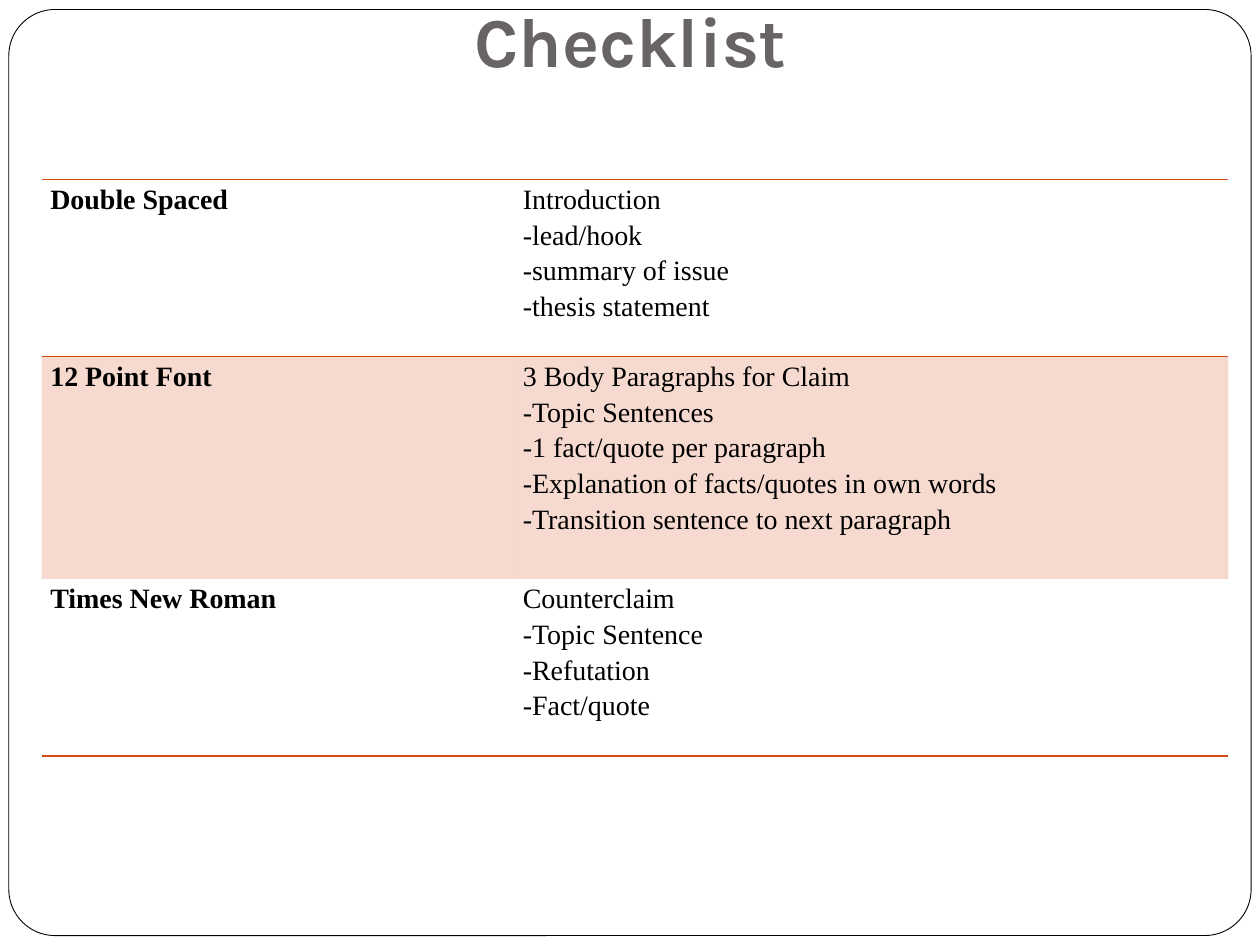
import dataclasses

import lxml.etree
import pptx
import pptx.dml.color
import pptx.enum.shapes
import pptx.enum.text
import pptx.oxml.ns
import pptx.util


@dataclasses.dataclass(frozen=True)
class Theme:
    paper: str = "FFFFFF"
    ink: str = "000000"
    title_ink: str = "696464"
    accent: str = "D34817"
    band_opacity: int = 20
    title_font: str = "Karla"
    body_font: str = "Times New Roman"
    title_size: int = 40
    body_size: int = 16
    body_spacing: float = 1.15
    frame_width: float = 0.5
    rule_width: float = 1


NO_STYLE = "{2D5ABB26-0587-4C30-8999-92F81FD0307C}"
COLUMN_SHARES = (2.35, 1.4, 4.17, 1.5)
ROW_SHARES = (1.41, 1.77, 1.41)
CHECKLIST = (
    ("Double Spaced",
     ("Introduction", "-lead/hook", "-summary of issue", "-thesis statement")),
    ("12 Point Font",
     ("3 Body Paragraphs for Claim", "-Topic Sentences",
      "-1 fact/quote per paragraph",
      "-Explanation of facts/quotes in own words",
      "-Transition sentence to next paragraph")),
    ("Times New Roman",
     ("Counterclaim", "-Topic Sentence", "-Refutation", "-Fact/quote")),
)


def color(value):
    return pptx.dml.color.RGBColor.from_string(value)


def add_node(parent, tag, **attributes):
    return lxml.etree.SubElement(parent, pptx.oxml.ns.qn(tag), attributes)


class SlideBuilder:
    def __init__(self, presentation, theme):
        self.theme = theme
        self.width = presentation.slide_width
        self.height = presentation.slide_height
        self.slide = presentation.slides.add_slide(presentation.slide_layouts[6])

    def box(self, left, top, width, height):
        """Turn shares of the slide's size into lengths."""
        return (int(left * self.width), int(top * self.height),
                int(width * self.width), int(height * self.height))

    def style(self, paragraph, font_name, size, ink, bold):
        font = paragraph.font
        font.name, font.size, font.bold = font_name, pptx.util.Pt(size), bold
        font.color.rgb = color(ink)

    def frame(self, *shares, corner):
        shape = self.slide.shapes.add_shape(
            pptx.enum.shapes.MSO_SHAPE.ROUNDED_RECTANGLE, *self.box(*shares))
        shape.adjustments[0] = corner
        shape.shadow.inherit = False
        shape.fill.solid()
        shape.fill.fore_color.rgb = color(self.theme.paper)
        shape.line.color.rgb = color(self.theme.ink)
        shape.line.width = pptx.util.Pt(self.theme.frame_width)

    def title(self, text, *shares):
        text_frame = self.slide.shapes.add_textbox(*self.box(*shares)).text_frame
        text_frame.word_wrap = True
        text_frame.vertical_anchor = pptx.enum.text.MSO_ANCHOR.BOTTOM
        text_frame.margin_bottom = pptx.util.Inches(0.1)
        paragraph = text_frame.paragraphs[0]
        paragraph.text = text
        paragraph.alignment = pptx.enum.text.PP_ALIGN.CENTER
        self.style(paragraph, self.theme.title_font, self.theme.title_size,
                   self.theme.title_ink, True)

    def rule(self, cell, side):
        line = add_node(cell._tc.get_or_add_tcPr(), f"a:{side}",
                        w=str(pptx.util.Pt(self.theme.rule_width)))
        add_node(add_node(line, "a:solidFill"), "a:srgbClr", val=self.theme.accent)

    def band(self, cell):
        cell.fill.solid()
        cell.fill.fore_color.rgb = color(self.theme.accent)
        tint = cell._tc.tcPr.find(".//" + pptx.oxml.ns.qn("a:srgbClr"))
        add_node(tint, "a:alpha", val=str(self.theme.band_opacity * 1000))

    def write_cell(self, cell, lines, bold):
        cell.margin_left = cell.margin_right = pptx.util.Inches(0.07)
        cell.margin_top = cell.margin_bottom = 0
        cell.text = "\n".join(lines)
        for paragraph in cell.text_frame.paragraphs:
            paragraph.line_spacing = self.theme.body_spacing
            self.style(paragraph, self.theme.body_font, self.theme.body_size,
                       self.theme.ink, bold)

    def checklist(self, entries, *shares):
        left, top, width, height = self.box(*shares)
        table = self.slide.shapes.add_table(
            len(ROW_SHARES), len(COLUMN_SHARES), left, top, width, height).table
        table.first_row = table.horz_banding = False
        table._tbl.tblPr.find(pptx.oxml.ns.qn("a:tableStyleId")).text = NO_STYLE
        for column, share in zip(table.columns, COLUMN_SHARES):
            column.width = int(width * share / sum(COLUMN_SHARES))
        for row, share in zip(table.rows, ROW_SHARES):
            row.height = int(height * share / sum(ROW_SHARES))

        last = len(entries) - 1
        for index, (heading, details) in enumerate(entries):
            cells = table.rows[index].cells
            self.write_cell(cells[0], [heading], True)
            self.write_cell(cells[2], details, False)
            for cell in cells:
                # Rules enclose the first row and close the table
                if index == 0:
                    self.rule(cell, "lnT")
                if index in (0, last):
                    self.rule(cell, "lnB")
                if index % 2:
                    self.band(cell)
                else:
                    cell.fill.background()


def main():
    presentation = pptx.Presentation()
    presentation.slide_width = pptx.util.Inches(10)
    presentation.slide_height = pptx.util.Inches(7.5)
    builder = SlideBuilder(presentation, Theme())

    # Rounded page frame
    builder.frame(0.007, 0.01, 0.986, 0.98, corner=0.05)
    # Heading
    builder.title("Checklist", 0.017, 0.02, 0.967, 0.08)
    # Format rules beside the essay parts
    builder.checklist(CHECKLIST, 0.033, 0.19, 0.942, 0.61)

    presentation.save("out.pptx")


if __name__ == "__main__":
    main()
